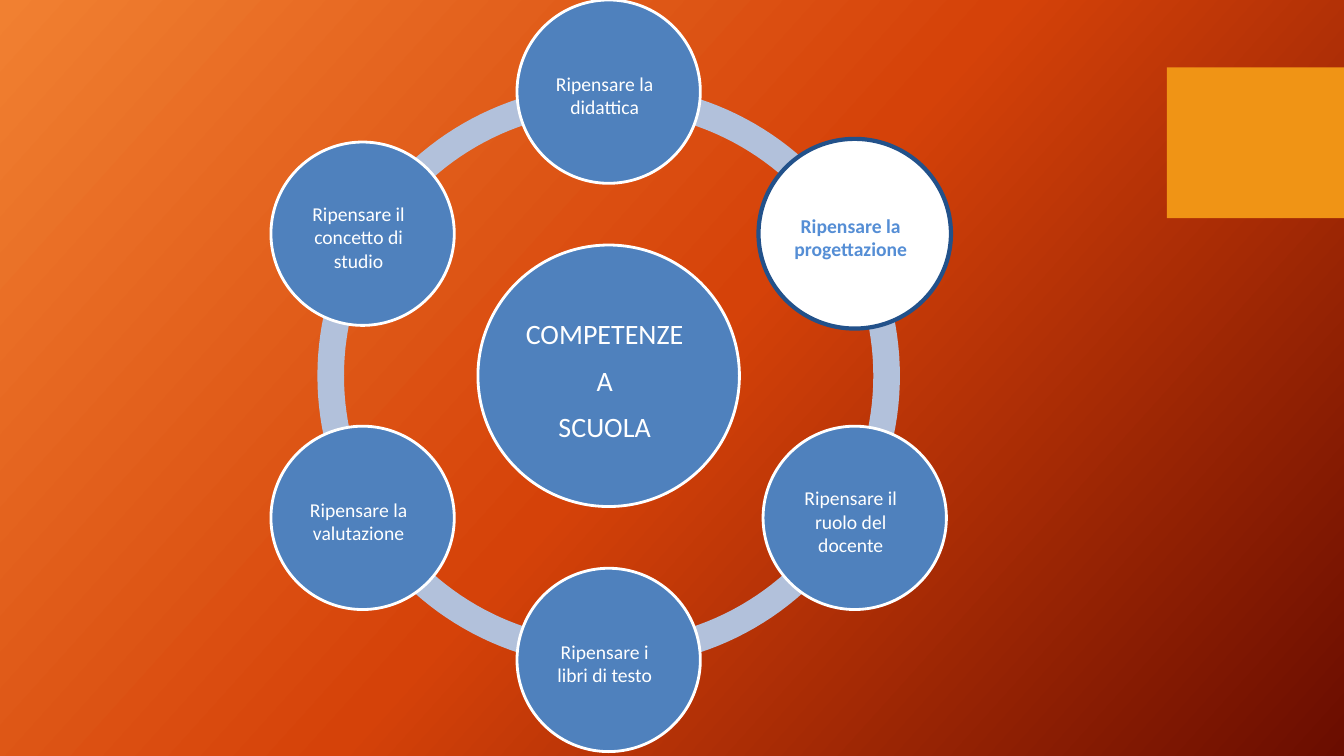
import copy
import math

from pptx import Presentation
from pptx.dml.color import RGBColor
from pptx.enum import shapes, text
from pptx.oxml.ns import qn
from pptx.util import Cm, Pt

WHITE = RGBColor(0xFF, 0xFF, 0xFF)
BLUE = RGBColor(0x4F, 0x81, 0xBD)
PALE_BLUE = RGBColor(0xB2, 0xC1, 0xDB)
DARK_BLUE = RGBColor(0x22, 0x51, 0x8A)
BRIGHT_BLUE = RGBColor(0x55, 0x8E, 0xD5)
AMBER = RGBColor(0xF0, 0x94, 0x15)
BACKGROUND_STOPS = [
    (0, RGBColor(0xF1, 0x80, 0x31)),
    (0.5, RGBColor(0xD5, 0x42, 0x09)),
    (1, RGBColor(0x6A, 0x0D, 0x00)),
]

HUB_LINES = ["COMPETENZE", "A", "SCUOLA"]
TOPICS = [
    "Ripensare la didattica",
    "Ripensare la progettazione",
    "Ripensare il ruolo del docente",
    "Ripensare i libri di testo",
    "Ripensare la valutazione",
    "Ripensare il concetto di studio",
]
HIGHLIGHTED = "Ripensare la progettazione"
RING_THICKNESS = 0.67
ARC_STEPS = 30


def paint_background(slide):
    fill = slide.background.fill
    fill.gradient()
    fill.gradient_angle = 360 - 42
    stop_list = slide.element.find(".//" + qn("a:gsLst"))
    stop_list.append(copy.deepcopy(stop_list[0]))
    for stop, (position, color) in zip(fill.gradient_stops, BACKGROUND_STOPS):
        stop.position = position
        stop.color.rgb = color


def fill_plain(shape, color):
    """Give the shape a solid fill without outline or shadow."""
    shape.shadow.inherit = False
    shape.fill.solid()
    shape.fill.fore_color.rgb = color
    shape.line.fill.background()


def point_on_circle(center_x, center_y, radius, degrees):
    """Return the point at an angle measured clockwise from the top."""
    angle = math.radians(degrees)
    return center_x + radius * math.sin(angle), center_y - radius * math.cos(angle)


def add_ring_segment(slide, center_x, center_y, radius, start, sweep):
    angles = [start + sweep * step / ARC_STEPS for step in range(ARC_STEPS + 1)]
    outer = [point_on_circle(center_x, center_y, radius, angle) for angle in angles]
    inner = [point_on_circle(center_x, center_y, radius - RING_THICKNESS, angle)
             for angle in reversed(angles)]
    points = [(Cm(x), Cm(y)) for x, y in outer + inner]
    builder = slide.shapes.build_freeform(*points[0])
    builder.add_line_segments(points[1:], close=True)
    fill_plain(builder.convert_to_shape(), PALE_BLUE)


def add_disc(slide, center_x, center_y, width, height, lines, size, pitch,
             fill=BLUE, outline=WHITE, outline_width=2, ink=WHITE, bold=False):
    """Add an outlined ellipse whose text sits slightly left of and below its centre."""
    disc = slide.shapes.add_shape(
        shapes.MSO_SHAPE.OVAL, Cm(center_x - width / 2), Cm(center_y - height / 2),
        Cm(width), Cm(height))
    fill_plain(disc, fill)
    disc.line.color.rgb = outline
    disc.line.width = Pt(outline_width)
    frame = disc.text_frame
    frame.word_wrap = True
    frame.vertical_anchor = text.MSO_ANCHOR.MIDDLE
    frame.margin_left, frame.margin_right = Cm(0.1), Cm(0.3)
    frame.margin_top, frame.margin_bottom = Cm(0.17), 0
    frame.text = "\n".join(lines)
    for index, paragraph in enumerate(frame.paragraphs):
        paragraph.alignment = text.PP_ALIGN.CENTER
        paragraph.line_spacing = Pt(pitch)
        paragraph.space_before = Pt(8 if index else 0)
        paragraph.font.name = "Calibri"
        paragraph.font.size = Pt(size)
        paragraph.font.bold = bold
        paragraph.font.color.rgb = ink


def add_cycle(slide, left, top, diameter):
    """Draw the ring, the hub and the topics spread evenly clockwise from the top."""
    radius = diameter / 2
    center_x, center_y = left + radius, top + radius
    sweep = 360 / len(TOPICS)
    for index in reversed(range(len(TOPICS))):
        add_ring_segment(slide, center_x, center_y, radius, index * sweep, sweep)
    add_disc(slide, center_x, center_y, 6.59, 6.59, HUB_LINES, 20, 25.3)

    for index, topic in enumerate(TOPICS):
        x, y = point_on_circle(center_x, center_y, radius - 0.18, index * sweep)
        width, height, style = 4.62, 4.62, {}
        if topic == HIGHLIGHTED:
            width, height = 4.85, 4.78
            style = dict(fill=WHITE, outline=DARK_BLUE, outline_width=3,
                         ink=BRIGHT_BLUE, bold=True)
        add_disc(slide, x, y, width, height, [topic], 14, 16.8, **style)


def add_corner_block(slide, left, top, width, height):
    block = slide.shapes.add_shape(shapes.MSO_SHAPE.RECTANGLE, Cm(left), Cm(top),
                                   Cm(width), Cm(height))
    fill_plain(block, AMBER)


def main():
    presentation = Presentation()
    presentation.slide_width, presentation.slide_height = Cm(33.87), Cm(19.05)
    slide = presentation.slides.add_slide(presentation.slide_layouts[6])
    paint_background(slide)
    add_corner_block(slide, left=29.41, top=1.7, width=4.46, height=3.8)
    add_cycle(slide, left=8, top=2.13, diameter=14.68)
    presentation.save("out.pptx")


if __name__ == "__main__":
    main()
